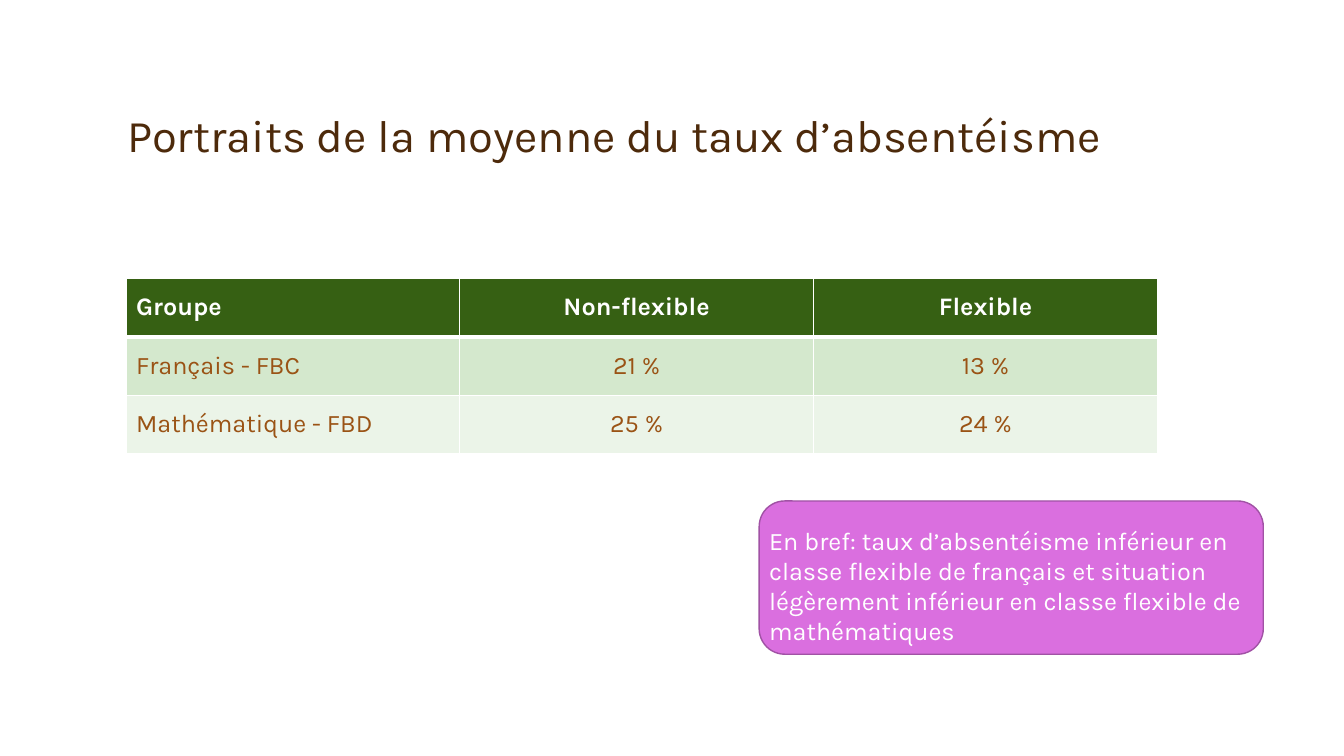
from lxml.etree import SubElement
from pptx import Presentation
from pptx.dml.color import RGBColor
from pptx.enum.shapes import MSO_SHAPE as Shape
from pptx.enum.text import MSO_ANCHOR as Anchor, PP_ALIGN as Align
from pptx.oxml.ns import qn
from pptx.util import Inches, Pt


def color(value):
    return RGBColor.from_string(value)


class AbsenteeismSlide:
    """Holds the style and the current slide, and adds each kind of element."""

    font_name = "Karla"
    body_size = 18
    white = "FFFFFF"
    title_color = "4D2A0B"
    cell_color = "9A5315"
    header_fill = "366013"
    band_fills = ("D4E8CD", "EBF4E8")
    row_height = 0.58

    def __init__(self, presentation):
        self.slide = presentation.slides.add_slide(presentation.slide_layouts[5])

    def add_run(self, paragraph, text, size, text_color, bold=False):
        run = paragraph.add_run()
        run.text = text
        run.font.name = self.font_name
        run.font.size = Pt(size)
        run.font.bold = bold
        run.font.color.rgb = color(text_color)

    def add_title(self, text, box):
        title = self.slide.shapes.title
        title.left, title.top, title.width, title.height = map(Inches, box)
        frame = title.text_frame
        frame.word_wrap = True
        frame.vertical_anchor = Anchor.BOTTOM
        paragraph = frame.paragraphs[0]
        paragraph.alignment = Align.LEFT
        paragraph.line_spacing = 0.9
        self.add_run(paragraph, text, 32.4, self.title_color)

    def add_borders(self, cell, bottom_width):
        properties = cell._tc.get_or_add_tcPr()
        widths = {"lnL": 1, "lnR": 1, "lnT": 1, "lnB": bottom_width}
        for side, width in widths.items():
            line = SubElement(properties, qn(f"a:{side}"), w=str(Pt(width)))
            fill = SubElement(line, qn("a:solidFill"))
            SubElement(fill, qn("a:srgbClr"), val=self.white)

    def add_table(self, rows, left, top, column_widths):
        shape = self.slide.shapes.add_table(
            len(rows), len(column_widths), Inches(left), Inches(top),
            Inches(sum(column_widths)), Inches(self.row_height * len(rows)))
        table = shape.table
        for column, width in zip(table.columns, column_widths):
            column.width = Inches(width)
        for row_index, values in enumerate(rows):
            table.rows[row_index].height = Inches(self.row_height)
            header = row_index == 0
            fill = self.header_fill if header else self.band_fills[(row_index - 1) % 2]
            text_color = self.white if header else self.cell_color
            for column_index, value in enumerate(values):
                cell = table.cell(row_index, column_index)
                self.add_borders(cell, 3 if header else 1)
                cell.fill.solid()
                cell.fill.fore_color.rgb = color(fill)
                cell.vertical_anchor = Anchor.MIDDLE
                paragraph = cell.text_frame.paragraphs[0]
                paragraph.alignment = Align.CENTER if column_index else Align.LEFT
                self.add_run(paragraph, value, self.body_size, text_color, header)

    def add_panel(self, box, fill, outline):
        shape = self.slide.shapes.add_shape(Shape.ROUNDED_RECTANGLE, *map(Inches, box))
        shape.shadow.inherit = False
        shape.fill.solid()
        shape.fill.fore_color.rgb = color(fill)
        shape.line.color.rgb = color(outline)
        shape.line.width = Pt(1)

    def add_text(self, text, box):
        frame = self.slide.shapes.add_textbox(*map(Inches, box)).text_frame
        frame.word_wrap = True
        self.add_run(frame.paragraphs[0], text, self.body_size, self.white)


def main():
    presentation = Presentation()
    presentation.slide_width = Inches(13.33)
    presentation.slide_height = Inches(7.5)
    page = AbsenteeismSlide(presentation)
    page.add_title("Portraits de la moyenne du taux d’absentéisme", (1.16, 0.86, 11, 0.8))
    page.add_table(
        [("Groupe", "Non-flexible", "Flexible"),
         ("Français - FBC", "21 %", "13 %"),
         ("Mathématique - FBD", "25 %", "24 %")],
        1.25, 2.76, (3.31, 3.51, 3.41))
    page.add_panel((7.53, 4.97, 5, 1.52), "DA6FDF", "A152A5")
    page.add_text(
        "En bref: taux d’absentéisme inférieur en classe flexible de français et "
        "situation légèrement inférieur en classe flexible de mathématiques",
        (7.53, 5.16, 4.9, 1.31))
    presentation.save("out.pptx")


if __name__ == "__main__":
    main()
